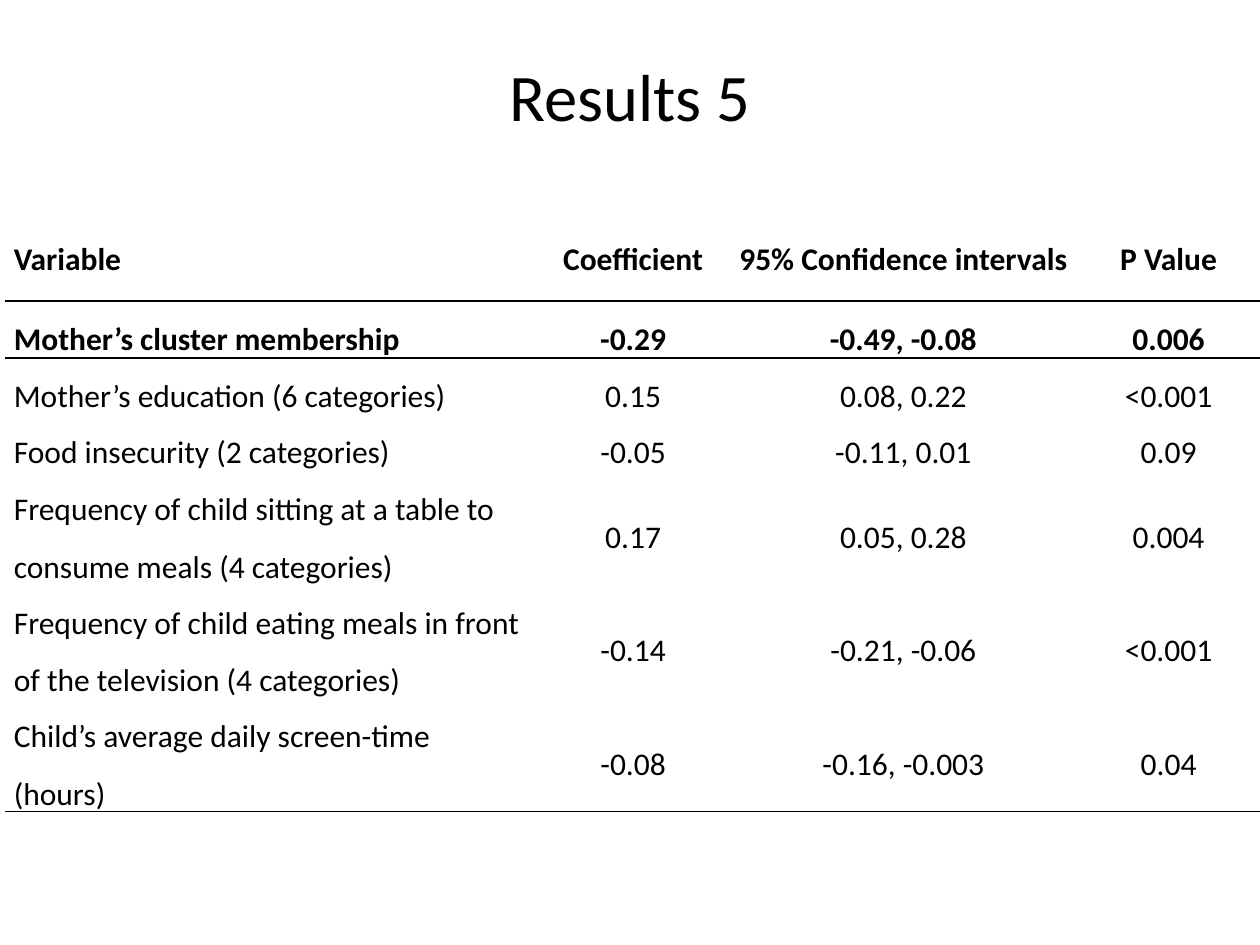
from lxml.etree import SubElement
from pptx import Presentation
from pptx.dml.color import RGBColor
from pptx.enum.text import MSO_ANCHOR as Anchor, PP_ALIGN as Align
from pptx.oxml.ns import qn
from pptx.util import Inches, Pt

BLACK = RGBColor(0, 0, 0)
FONT = "Calibri"
PLAIN_STYLE = "{2D5ABB26-0587-4C30-8999-92F81FD0307C}"
COLUMN_WIDTHS = [4.22, 1.53, 2.76, 1.45]
ROW_HEIGHTS = [0.53] + [0.35] * 3 + [0.69] * 3
RESULTS = [
    ("Variable", "Coefficient", "95% Confidence intervals", "P Value"),
    ("Mother’s cluster membership", "-0.29", "-0.49, -0.08", "0.006"),
    ("Mother’s education (6 categories)", "0.15", "0.08, 0.22", "<0.001"),
    ("Food insecurity (2 categories)", "-0.05", "-0.11, 0.01", "0.09"),
    ("Frequency of child sitting at a table to consume meals (4 categories)",
     "0.17", "0.05, 0.28", "0.004"),
    ("Frequency of child eating meals in front of the television (4 categories)",
     "-0.14", "-0.21, -0.06", "<0.001"),
    ("Child’s average daily screen-time (hours)", "-0.08", "-0.16, -0.003", "0.04"),
]
RULES = {0: "a:lnB", 1: "a:lnT", len(RESULTS) - 1: "a:lnB"}


def style_paragraph(para, size, align, bold=False):
    para.alignment = align
    para.font.name = FONT
    para.font.size = Pt(size)
    para.font.bold = bold
    para.font.color.rgb = BLACK


def add_rule(cell, side):
    line = SubElement(cell._tc.get_or_add_tcPr(), qn(side), w=str(Pt(1)))
    fill = SubElement(line, qn("a:solidFill"))
    SubElement(fill, qn("a:srgbClr"), val=str(BLACK))


deck = Presentation()
deck.slide_width = Inches(10)
deck.slide_height = Inches(7.5)
page = deck.slides.add_slide(deck.slide_layouts[6])

title = page.shapes.add_textbox(Inches(0.5), Inches(0.13), Inches(9), Inches(1.25))
title.text_frame.word_wrap = True
title.text_frame.vertical_anchor = Anchor.MIDDLE
title.text_frame.text = "Results 5"
style_paragraph(title.text_frame.paragraphs[0], 38, Align.CENTER)

table = page.shapes.add_table(
    len(RESULTS), len(COLUMN_WIDTHS),
    Inches(0.04), Inches(1.86), Inches(9.96), Inches(4.53),
).table
table.first_row = False
table.horz_banding = False
table._tbl.tblPr.find(qn("a:tableStyleId")).text = PLAIN_STYLE
for column, width in zip(table.columns, COLUMN_WIDTHS):
    column.width = Inches(width)

for row, (height, values) in enumerate(zip(ROW_HEIGHTS, RESULTS)):
    table.rows[row].height = Inches(height)
    for col, value in enumerate(values):
        cell = table.cell(row, col)
        cell.text = value
        cell.margin_left = cell.margin_right = Inches(0.07)
        cell.margin_top = cell.margin_bottom = 0
        cell.vertical_anchor = Anchor.MIDDLE if row > 3 and col > 0 else Anchor.TOP
        para = cell.text_frame.paragraphs[0]
        style_paragraph(para, 18, Align.CENTER if col else Align.LEFT, row < 2)
        para.line_spacing = 1.5 if row else 1.15
        if row in RULES:
            add_rule(cell, RULES[row])
        cell.fill.background()

deck.save("out.pptx")
